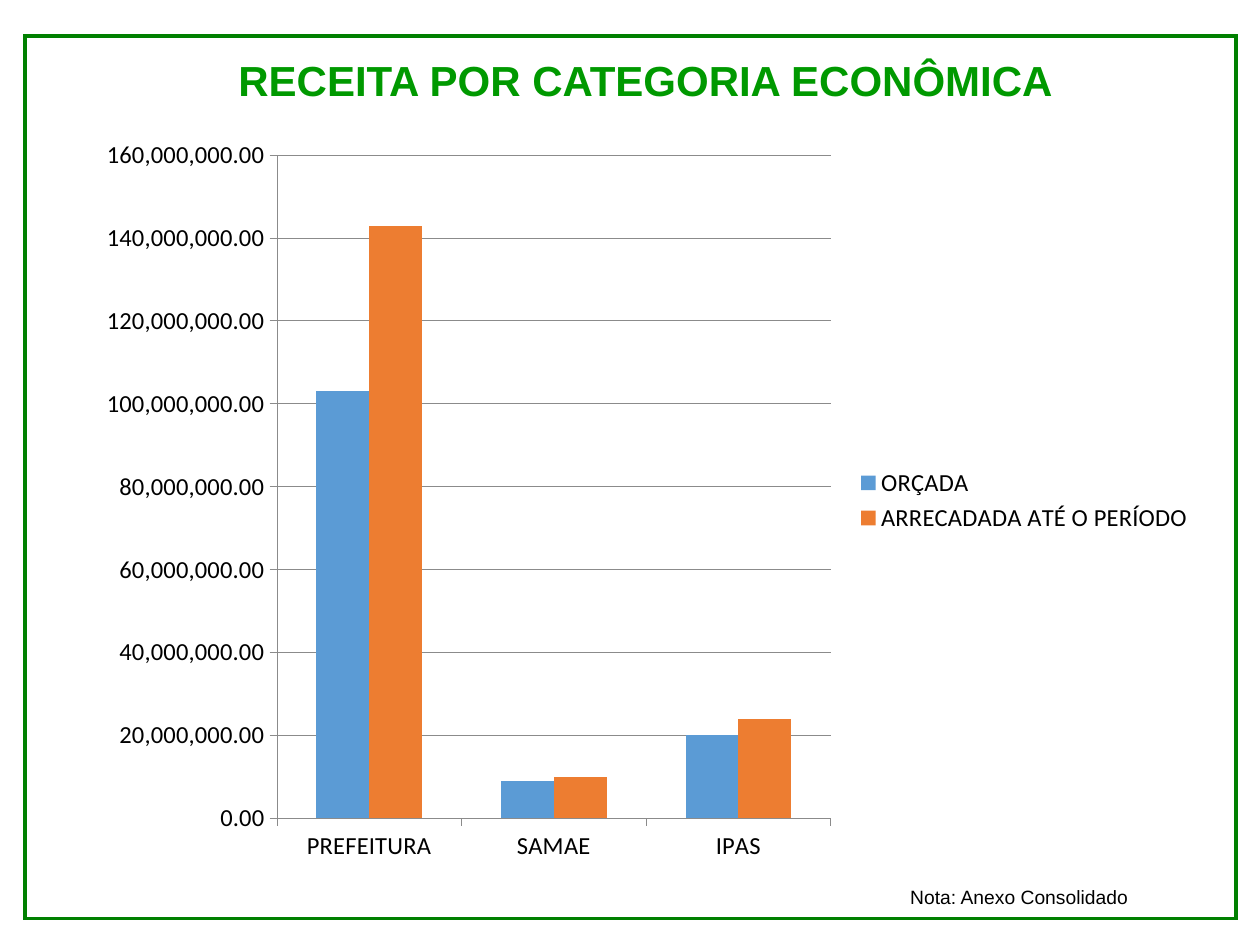
from lxml.etree import SubElement
from pptx import Presentation
from pptx.chart.data import CategoryChartData
from pptx.dml.color import RGBColor
from pptx.enum.chart import XL_CHART_TYPE, XL_LEGEND_POSITION, XL_TICK_MARK
from pptx.enum.shapes import MSO_SHAPE
from pptx.enum.text import MSO_ANCHOR, PP_ALIGN
from pptx.oxml.ns import qn
from pptx.util import Pt

GREEN = RGBColor(0x00, 0x99, 0x00)
DARK = RGBColor(0x00, 0x80, 0x00)
BLACK = RGBColor(0x00, 0x00, 0x00)
GRAY = RGBColor(0x8B, 0x8B, 0x8B)
BLUE = RGBColor(0x5B, 0x9B, 0xD5)
ORANGE = RGBColor(0xED, 0x7D, 0x31)


def style(font, color, **form):
    for key, val in form.items():
        setattr(font, key, val)
    font.color.rgb = color


deck = Presentation()
deck.slide_width, deck.slide_height = Pt(720), Pt(540)
slide = deck.slides.add_slide(deck.slide_layouts[5])

# Title
title = slide.shapes.title
place = {"left": Pt(48), "top": Pt(14.5), "width": Pt(621), "height": Pt(65.5)}
for key, val in place.items():
    setattr(title, key, val)
frame = title.text_frame
form = {"text": "RECEITA POR CATEGORIA ECONÔMICA", "word_wrap": True,
        "vertical_anchor": MSO_ANCHOR.MIDDLE, "margin_left": Pt(28)}
for key, val in form.items():
    setattr(frame, key, val)
para = frame.paragraphs[0]
para.alignment = PP_ALIGN.CENTER
para.line_spacing = 0.9
style(para.runs[0].font, GREEN, name="Arial", size=Pt(24), bold=True)

# Border with square corners
border = slide.shapes.add_shape(
    MSO_SHAPE.RECTANGLE, Pt(14.4), Pt(20.5), Pt(692), Pt(504.5))
border.shadow.inherit = False
border.fill.background()
border.line.color.rgb = DARK
border.line.width = Pt(2)
edge = border.element.spPr.find(qn("a:ln"))
SubElement(edge, qn("a:miter"), lim="800000")

# Note
note = slide.shapes.add_textbox(Pt(513), Pt(502.5), Pt(187), Pt(21))
note.text_frame.word_wrap = True
note.text_frame.text = "Nota: Anexo Consolidado"
style(note.text_frame.paragraphs[0].runs[0].font, BLACK,
      name="Arial", size=Pt(11))

# Chart
data = CategoryChartData(number_format="#,##0.00")
data.categories = ["PREFEITURA", "SAMAE", "IPAS"]
data.add_series("ORÇADA", [103_000_000, 9_000_000, 20_000_000])
data.add_series("ARRECADADA ATÉ O PERÍODO",
                [143_000_000, 10_000_000, 24_000_000])
chart = slide.shapes.add_chart(
    XL_CHART_TYPE.COLUMN_CLUSTERED,
    Pt(48.2), Pt(71.5), Pt(641), Pt(429), data).chart
chart.has_title = False
style(chart.font, BLACK, name="Calibri", size=Pt(14))

chart.has_legend = True
chart.legend.position = XL_LEGEND_POSITION.RIGHT
chart.legend.include_in_layout = False
style(chart.legend.font, BLACK, name="Calibri", size=Pt(14))

plot = chart.plots[0]
plot.gap_width = 150
plot.overlap = 0
plot.vary_by_categories = False
for series, color in zip(plot.series, (BLUE, ORANGE)):
    series.format.fill.solid()
    series.format.fill.fore_color.rgb = color

scale = chart.value_axis
form = {"minimum_scale": 0, "maximum_scale": 160_000_000,
        "major_unit": 20_000_000, "has_major_gridlines": True}
for key, val in form.items():
    setattr(scale, key, val)
scale.tick_labels.number_format = "#,##0.00"
scale.tick_labels.number_format_is_linked = False
for axis in (chart.category_axis, scale):
    axis.major_tick_mark = XL_TICK_MARK.OUTSIDE
    axis.minor_tick_mark = XL_TICK_MARK.NONE
    style(axis.tick_labels.font, BLACK, name="Calibri", size=Pt(14))
for item in (chart.category_axis, scale, scale.major_gridlines):
    item.format.line.color.rgb = GRAY
    item.format.line.width = Pt(0.5)

deck.save("out.pptx")
